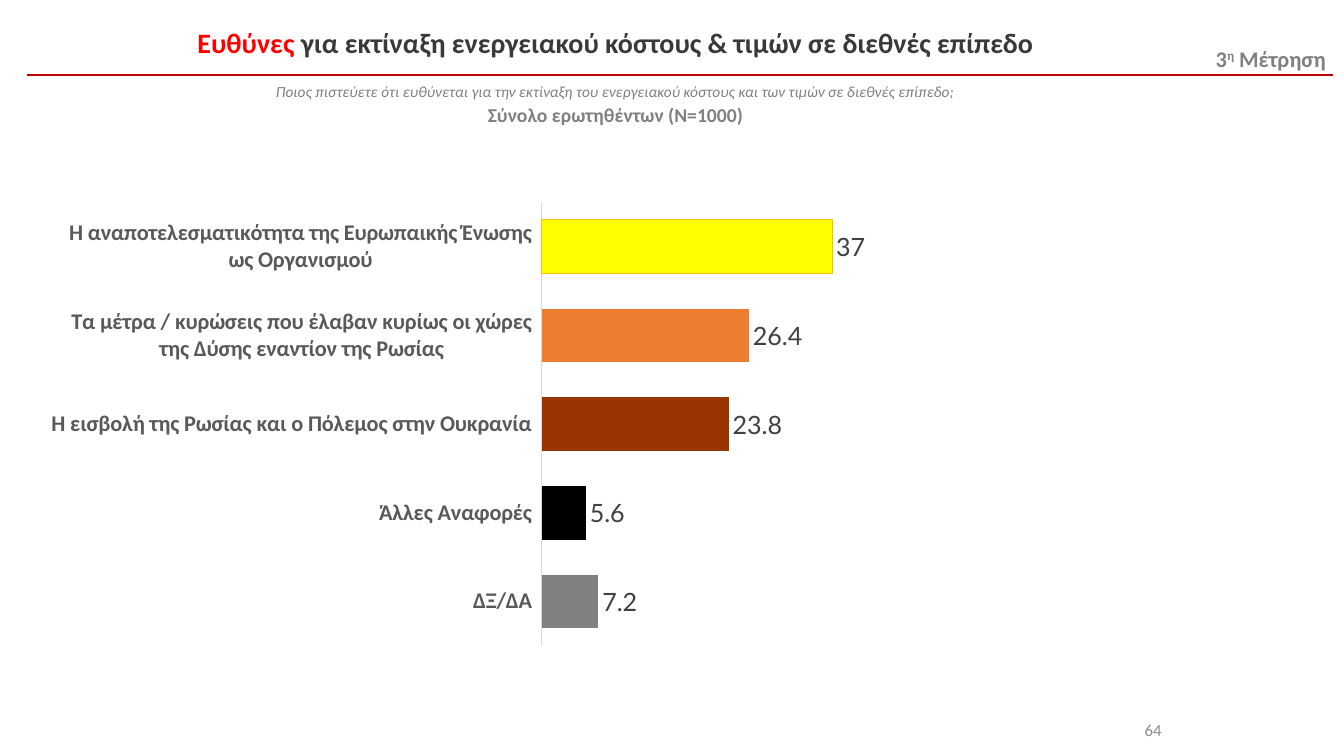
from lxml import etree
from pptx import Presentation
from pptx.chart.data import CategoryChartData as Data
from pptx.dml.color import RGBColor
from pptx.enum.chart import XL_CHART_TYPE as Kind, XL_LABEL_POSITION as Place
from pptx.enum.chart import XL_TICK_LABEL_POSITION as Label, XL_TICK_MARK as Tick
from pptx.enum.shapes import MSO_CONNECTOR as Link, MSO_SHAPE as Form
from pptx.enum.text import MSO_ANCHOR as Anchor, PP_ALIGN as Align
from pptx.oxml import parse_xml
from pptx.oxml.ns import nsdecls, qn
from pptx.util import Inches, Pt

WHITE = RGBColor(0xFF, 0xFF, 0xFF)
BLACK = RGBColor(0, 0, 0)
RED = RGBColor(0xFF, 0, 0)
CRIMSON = RGBColor(0xC0, 0, 0)
DARK = RGBColor(0x3B, 0x38, 0x38)
GRAY = RGBColor(0x80, 0x80, 0x80)
PALE = RGBColor(0x8C, 0x8C, 0x8C)
SLATE = RGBColor(0x59, 0x59, 0x59)
INK = RGBColor(0x40, 0x40, 0x40)
RULE = RGBColor(0xD9, 0xD9, 0xD9)
YELLOW = RGBColor(0xFF, 0xFF, 0)
GOLD = RGBColor(0xFF, 0xC0, 0)
ORANGE = RGBColor(0xED, 0x7D, 0x31)
BROWN = RGBColor(0x99, 0x33, 0)

BARS = [
    ("Η αναποτελεσματικότητα της Ευρωπαικής Ένωσης ως Οργανισμού", 37, YELLOW),
    ("Τα μέτρα / κυρώσεις που έλαβαν κυρίως οι χώρες της Δύσης εναντίον της Ρωσίας", 26.4, ORANGE),
    ("Η εισβολή της Ρωσίας και ο Πόλεμος στην Ουκρανία", 23.8, BROWN),
    ("Άλλες Αναφορές", 5.6, BLACK),
    ("ΔΞ/ΔΑ", 7.2, GRAY),
]
PLOT = {"x": 0.416, "y": 0.067, "w": 0.539, "h": 0.873}


class Page:
    def __init__(self, deck, face="Calibri"):
        self.slide = deck.slides.add_slide(deck.slide_layouts[6])
        self.shapes = self.slide.shapes
        self.face = face

    def style(self, font, size, color, bold=False, italic=False, face=None):
        font.name = face or self.face
        font.size = Pt(size)
        font.color.rgb = color
        font.bold = bold
        font.italic = italic

    def fill(self, frame, paras, align):
        for i, (gap, space, runs) in enumerate(paras):
            para = frame.paragraphs[0] if i == 0 else frame.add_paragraph()
            para.alignment = align
            para.line_spacing = space
            para.space_before = Pt(gap)
            for words, *look in runs:
                run = para.add_run()
                run.text = words
                self.style(run.font, *look)

    def text(self, box, paras, align=Align.LEFT, wrap=True):
        frame = self.shapes.add_textbox(*map(Inches, box)).text_frame
        frame.word_wrap = wrap
        self.fill(frame, paras, align)
        return frame

    def block(self, box, color, paras, align):
        shape = self.shapes.add_shape(Form.RECTANGLE, *map(Inches, box))
        shape.shadow.inherit = False
        shape.fill.solid()
        shape.fill.fore_color.rgb = color
        shape.line.fill.background()
        shape.text_frame.vertical_anchor = Anchor.MIDDLE
        self.fill(shape.text_frame, paras, align)

    def line(self, ends, color, width):
        line = self.shapes.add_connector(Link.STRAIGHT, *map(Inches, ends))
        line.line.color.rgb = color
        line.line.width = Pt(width)
        etree.SubElement(line._element.spPr, qn("a:effectLst"))

    def chart(self, box, bars):
        data = Data()
        data.categories = [name for name, _, _ in bars]
        data.add_series("Series 1", [value for _, value, _ in bars])
        chart = self.shapes.add_chart(Kind.BAR_CLUSTERED, *map(Inches, box), data).chart
        self.style(chart.font, 10, BLACK)
        chart.has_legend = False
        chart.has_title = False
        self.axes(chart)

        plot = chart.plots[0]
        plot.gap_width = 65
        plot.vary_by_categories = False
        series = plot.series[0]
        series.format.fill.solid()
        series.format.fill.fore_color.rgb = GRAY
        for i, (_, _, color) in enumerate(bars):
            look = series.points[i].format
            look.fill.solid()
            look.fill.fore_color.rgb = color
        edge = series.points[0].format.line
        edge.color.rgb = GOLD
        edge.width = Pt(0.75)

        labels = series.data_labels
        labels.show_value = True
        labels.position = Place.OUTSIDE_END
        self.style(labels.font, 18, INK, face="Lato")
        self.layout(chart)

    def axes(self, chart):
        names = chart.category_axis
        names.reverse_order = True
        names.major_tick_mark = Tick.NONE
        names.minor_tick_mark = Tick.NONE
        names.tick_label_position = Label.LOW
        names.format.line.color.rgb = RULE
        names.format.line.width = Pt(0.75)
        self.style(names.tick_labels.font, 16, SLATE, True)
        scale = chart.value_axis
        scale.minimum_scale = 0
        scale.maximum_scale = 80
        scale.major_unit = 20
        scale.has_major_gridlines = False
        scale.visible = False

    def layout(self, chart):
        area = chart._chartSpace.chart.plotArea
        for old in area.findall(qn("c:layout")):
            area.remove(old)
        modes = '<c:xMode val="edge"/><c:yMode val="edge"/>'
        sides = "".join(f'<c:{key} val="{val}"/>' for key, val in PLOT.items())
        area.insert(0, parse_xml(
            f'<c:layout {nsdecls("c")}><c:manualLayout><c:layoutTarget val="inner"/>'
            f"{modes}{sides}</c:manualLayout></c:layout>"))


def main():
    deck = Presentation()
    deck.slide_width = Inches(13.33)
    deck.slide_height = Inches(7.5)
    page = Page(deck)
    page.line((0.27, 0.74, 13.22, 0.74), CRIMSON, 1.5)
    wave = page.text((11.96, 0.4, 1.37, 0.37), [
        (0, 1.0, [("3", 16, GRAY, True), ("η", 16, GRAY, True), (" Μέτρηση", 16, GRAY, True)]),
    ], wrap=False)
    wave.paragraphs[0].runs[1].font._element.set("baseline", "30000")
    page.text((0.32, 0.17, 11.57, 1.17), [
        (0, 1.1, [("Ευθύνες", 20, RED, True),
                  (" για εκτίναξη ενεργειακού κόστους & τιμών σε διεθνές επίπεδο", 20, DARK, True)]),
        (15, 1.1, [("Ποιος πιστεύετε ότι ευθύνεται για την εκτίναξη του ενεργειακού κόστους "
                    "και των τιμών σε διεθνές επίπεδο;", 11, GRAY, False, True)]),
        (0, 1.1, [("Σύνολο ερωτηθέντων (N=1000)", 14, GRAY, True)]),
    ], Align.CENTER)
    page.block((10.98, 7.04, 0.64, 0.4), WHITE, [(0, 1.0, [("64", 12, PALE)])], Align.RIGHT)
    page.chart((0.51, 1.67, 11.61, 5.04), BARS)
    deck.save("out.pptx")


if __name__ == "__main__":
    main()
